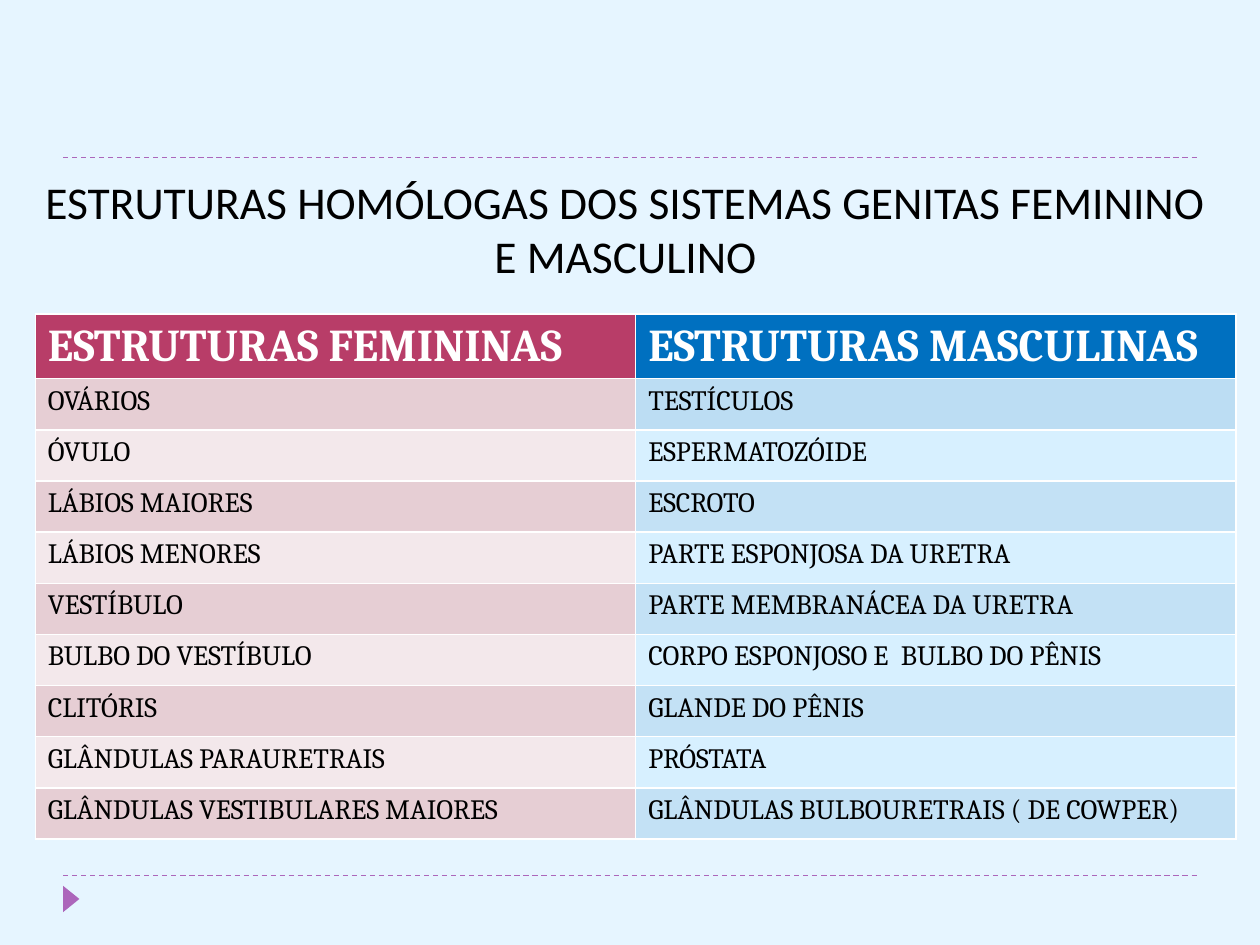
from lxml import etree
from pptx import Presentation
from pptx.dml.color import RGBColor
from pptx.enum.dml import MSO_LINE
from pptx.enum.shapes import MSO_CONNECTOR, MSO_SHAPE
from pptx.enum.text import MSO_ANCHOR, MSO_AUTO_SIZE, PP_ALIGN
from pptx.oxml.ns import qn
from pptx.util import Inches, Pt

STRAIGHT = MSO_CONNECTOR.STRAIGHT
TRIANGLE = MSO_SHAPE.ISOSCELES_TRIANGLE
DASH = MSO_LINE.DASH
TOP = MSO_ANCHOR.TOP
CENTER = PP_ALIGN.CENTER
NO_AUTOFIT = MSO_AUTO_SIZE.NONE

BACKGROUND = RGBColor(0xE6, 0xF5, 0xFF)
PURPLE = RGBColor(0xAC, 0x66, 0xBB)
BLACK = RGBColor(0, 0, 0)
WHITE = RGBColor(0xFF, 0xFF, 0xFF)
PINK = RGBColor(0xB8, 0x3D, 0x68)
PINK_BAND = RGBColor(0xE6, 0xCE, 0xD4)
PINK_LIGHT = RGBColor(0xF3, 0xE8, 0xEB)
BLUE = RGBColor(0x00, 0x70, 0xC0)
BLUE_LIGHT = RGBColor(0xCC, 0xEC, 0xFF)

HEADING = "ESTRUTURAS HOMÓLOGAS DOS SISTEMAS GENITAS FEMININO E MASCULINO"
HEADERS = ("ESTRUTURAS FEMININAS", "ESTRUTURAS MASCULINAS")
PAIRS = [
    ("OVÁRIOS", "TESTÍCULOS"),
    ("ÓVULO", "ESPERMATOZÓIDE"),
    ("LÁBIOS MAIORES", "ESCROTO"),
    ("LÁBIOS MENORES", "PARTE ESPONJOSA DA URETRA"),
    ("VESTÍBULO", "PARTE MEMBRANÁCEA DA URETRA"),
    ("BULBO DO VESTÍBULO", "CORPO ESPONJOSO E  BULBO DO PÊNIS"),
    ("CLITÓRIS", "GLANDE DO PÊNIS"),
    ("GLÂNDULAS PARAURETRAIS", "PRÓSTATA"),
    ("GLÂNDULAS VESTIBULARES MAIORES", "GLÂNDULAS BULBOURETRAIS ( DE COWPER)"),
]


def add_run(p, text, font, size, color, bold=False):
    r = p.add_run()
    r.text = text
    r.font.name, r.font.size, r.font.bold = font, Pt(size), bold
    r.font.color.rgb = color


def fill_cell(cell, color, opacity=100):
    cell.fill.solid()
    cell.fill.fore_color.rgb = color
    if opacity < 100:
        clr = cell._tc.tcPr.find(".//" + qn("a:srgbClr"))
        etree.SubElement(clr, qn("a:alpha"), val=str(opacity * 1000))


def add_rule(slide, left, top, width):
    """Draw a dashed horizontal line."""
    line = slide.shapes.add_connector(STRAIGHT, left, top, left + width, top)
    line.line.color.rgb = PURPLE
    line.line.width = Pt(0.75)
    line.line.dash_style = DASH
    etree.SubElement(line._element.spPr, qn("a:effectLst"))


def add_frame(slide, left, top, width, height):
    """Draw the two dashed rules and the page marker below them."""
    for y in (top + height, top):
        add_rule(slide, left, y, width)
    marker = slide.shapes.add_shape(
        TRIANGLE, left - Inches(0.04), top + height + Inches(0.12), Inches(0.21), Inches(0.13))
    marker.rotation = 90
    marker.shadow.inherit = False
    marker.fill.solid()
    marker.fill.fore_color.rgb = PURPLE
    marker.line.fill.background()


def add_heading(slide, left, top, width, height):
    body = slide.placeholders[1]
    body.left, body.top, body.width, body.height = left, top, width, height
    tf = body.text_frame
    tf.word_wrap = True
    tf.auto_size = NO_AUTOFIT
    tf.vertical_anchor = TOP
    p = tf.paragraphs[0]
    pPr = p._p.get_or_add_pPr()
    pPr.set("marL", "0")
    pPr.set("indent", "0")
    etree.SubElement(pPr, qn("a:buNone"))
    p.alignment = CENTER
    p.space_before = Pt(0)
    add_run(p, HEADING, "Calibri", 26, BLACK)


def add_structures_table(slide, left, top, width, height):
    table = slide.shapes.add_table(
        len(PAIRS) + 1, len(HEADERS), left, top, width, height).table
    for col, (text, color) in enumerate(zip(HEADERS, (PINK, BLUE))):
        cell = table.cell(0, col)
        fill_cell(cell, color)
        add_run(cell.text_frame.paragraphs[0], text, "Cambria", 26, WHITE, True)
    for row, pair in enumerate(PAIRS, 1):
        if row % 2:
            fills = ((PINK_BAND, 100), (BLUE, 18 if row == 1 else 15))
        else:
            fills = ((PINK_LIGHT, 100), (BLUE_LIGHT, 55))
        for col, (text, fill) in enumerate(zip(pair, fills)):
            cell = table.cell(row, col)
            fill_cell(cell, *fill)
            add_run(cell.text_frame.paragraphs[0], text, "Cambria", 16, BLACK)


def main():
    prs = Presentation()
    prs.slide_width, prs.slide_height = Inches(10), Inches(7.5)
    slide = prs.slides.add_slide(prs.slide_layouts[1])
    slide.background.fill.solid()
    slide.background.fill.fore_color.rgb = BACKGROUND
    title = slide.shapes.title._element
    title.getparent().remove(title)

    add_frame(slide, Inches(0.5), Inches(1.25), Inches(9), Inches(5.7))
    add_heading(slide, Inches(0.2), Inches(1.33), Inches(9.53), Inches(1.08))
    add_structures_table(slide, Inches(0.28), Inches(2.49), Inches(9.53), Inches(4.06))
    prs.save("out.pptx")


if __name__ == "__main__":
    main()
